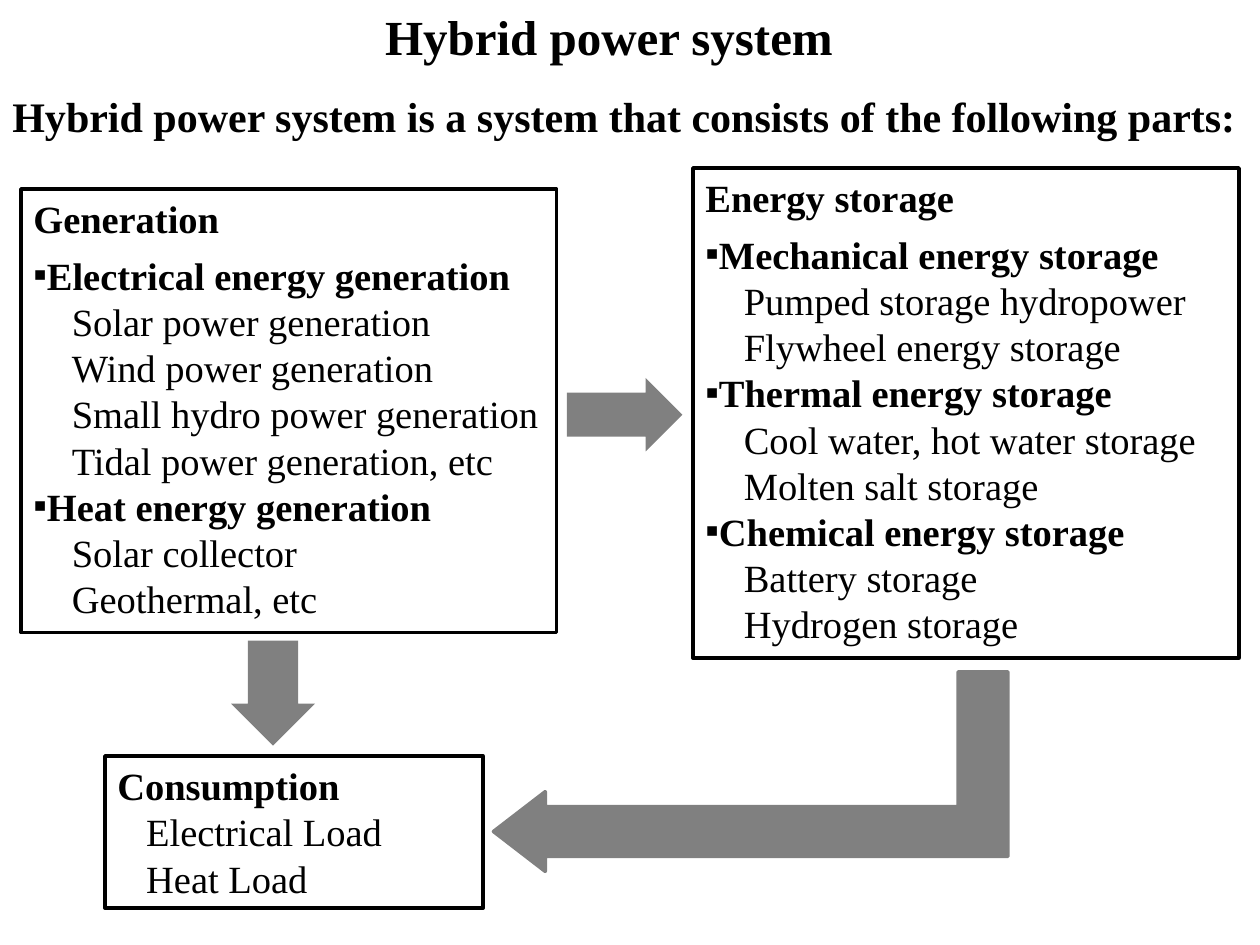
from dataclasses import dataclass

from lxml.etree import SubElement
from pptx import Presentation
from pptx.dml.color import RGBColor
from pptx.enum.shapes import MSO_SHAPE
from pptx.enum.text import MSO_ANCHOR, PP_ALIGN
from pptx.oxml.ns import qn
from pptx.util import Pt


@dataclass(frozen=True)
class Theme:
    font: str = "Times New Roman"
    ink: RGBColor = RGBColor(0, 0, 0)
    paper: RGBColor = RGBColor(255, 255, 255)
    arrow: RGBColor = RGBColor(128, 128, 128)
    title_size: float = 28
    subtitle_size: float = 24
    body_size: float = 22
    line_width: float = 2


@dataclass(frozen=True)
class Frame:
    left: float
    top: float
    width: float
    height: float

    def lengths(self) -> list:
        return [Pt(value) for value in (self.left, self.top, self.width, self.height)]


@dataclass(frozen=True)
class Group:
    heading: str
    items: tuple


@dataclass(frozen=True)
class Box:
    frame: Frame
    title: str
    groups: tuple
    item_indent: float
    title_gap: float


@dataclass(frozen=True)
class Arrow:
    kind: MSO_SHAPE
    frame: Frame
    adjustments: tuple
    rotation: float = 0
    flipped: bool = False
    outlined: bool = False


THEME = Theme()

BOXES = (
    Box(Frame(12, 108, 306, 253.5), "Generation", (
        Group("Electrical energy generation", (
            "Solar power generation", "Wind power generation",
            "Small hydro power generation", "Tidal power generation, etc")),
        Group("Heat energy generation", ("Solar collector", "Geothermal, etc")),
    ), item_indent=22, title_gap=6),
    Box(Frame(396, 96, 312, 280), "Energy storage", (
        Group("Mechanical energy storage", (
            "Pumped storage hydropower", "Flywheel energy storage")),
        Group("Thermal energy storage", (
            "Cool water, hot water storage", "Molten salt storage")),
        Group("Chemical energy storage", ("Battery storage", "Hydrogen storage")),
    ), item_indent=22, title_gap=6),
    Box(Frame(60, 432, 216, 87), "Consumption", (
        Group("", ("Electrical Load", "Heat Load")),
    ), item_indent=16.5, title_gap=0),
)

ARROWS = (
    Arrow(MSO_SHAPE.DOWN_ARROW, Frame(132, 366, 48, 60), (0.6, 0.5)),
    Arrow(MSO_SHAPE.RIGHT_ARROW, Frame(324, 216, 66, 42), (0.6, 0.5)),
    Arrow(MSO_SHAPE.BENT_UP_ARROW, Frame(372, 294, 114, 294),
          (0.25, 0.2, 0.26), rotation=90, flipped=True, outlined=True),
)


def add_text(text_frame, text: str, *, size: float = THEME.body_size,
             bold: bool = False, bullet: str = "", indent: float = 0,
             space_after: float = 0) -> None:
    """Write one paragraph, filling the empty first one if there is one."""
    paragraph = text_frame.paragraphs[0]
    if paragraph.runs:
        paragraph = text_frame.add_paragraph()
    paragraph.alignment = PP_ALIGN.LEFT
    paragraph.space_after = Pt(space_after)
    run = paragraph.add_run()
    run.text = text
    run.font.name = THEME.font
    run.font.size = Pt(size)
    run.font.bold = bold
    run.font.color.rgb = THEME.ink
    properties = paragraph._p.get_or_add_pPr()
    properties.set("marL", str(Pt(indent)))
    properties.set("indent", "0")
    if bullet:
        SubElement(properties, qn("a:buFont"), typeface=THEME.font)
        SubElement(properties, qn("a:buChar"), char=bullet)


def add_caption(slide, frame: Frame, text: str, size: float) -> None:
    text_box = slide.shapes.add_textbox(*frame.lengths())
    text_box.text_frame.word_wrap = True
    add_text(text_box.text_frame, text, size=size, bold=True)


def add_box(slide, box: Box) -> None:
    shape = slide.shapes.add_shape(MSO_SHAPE.RECTANGLE, *box.frame.lengths())
    shape.shadow.inherit = False
    shape.fill.solid()
    shape.fill.fore_color.rgb = THEME.paper
    shape.line.color.rgb = THEME.ink
    shape.line.width = Pt(THEME.line_width)
    text_frame = shape.text_frame
    text_frame.word_wrap = True
    text_frame.vertical_anchor = MSO_ANCHOR.TOP
    add_text(text_frame, box.title, bold=True, space_after=box.title_gap)
    for group in box.groups:
        if group.heading:
            add_text(text_frame, group.heading, bold=True, bullet="▪")
        for item in group.items:
            add_text(text_frame, item, indent=box.item_indent)


def add_arrow(slide, arrow: Arrow) -> None:
    shape = slide.shapes.add_shape(arrow.kind, *arrow.frame.lengths())
    shape.shadow.inherit = False
    shape.rotation = arrow.rotation
    for index, value in enumerate(arrow.adjustments):
        shape.adjustments[index] = value
    if arrow.flipped:
        shape.element.spPr.find(qn("a:xfrm")).set("flipV", "1")
    shape.fill.solid()
    shape.fill.fore_color.rgb = THEME.arrow
    if arrow.outlined:
        shape.line.color.rgb = THEME.arrow
        shape.line.width = Pt(THEME.line_width)
    else:
        shape.line.fill.background()


def main() -> None:
    presentation = Presentation()
    presentation.slide_width = Pt(720)
    presentation.slide_height = Pt(540)
    slide = presentation.slides.add_slide(presentation.slide_layouts[6])

    # Title and introduction
    add_caption(slide, Frame(213, 0, 273, 41), "Hybrid power system", THEME.title_size)
    add_caption(slide, Frame(0, 48, 720, 36),
                "Hybrid power system is a system that consists of the following parts:",
                THEME.subtitle_size)

    # Parts of the system
    for box in BOXES:
        add_box(slide, box)

    # Energy flow between the parts
    for arrow in ARROWS:
        add_arrow(slide, arrow)

    presentation.save("out.pptx")


if __name__ == "__main__":
    main()
